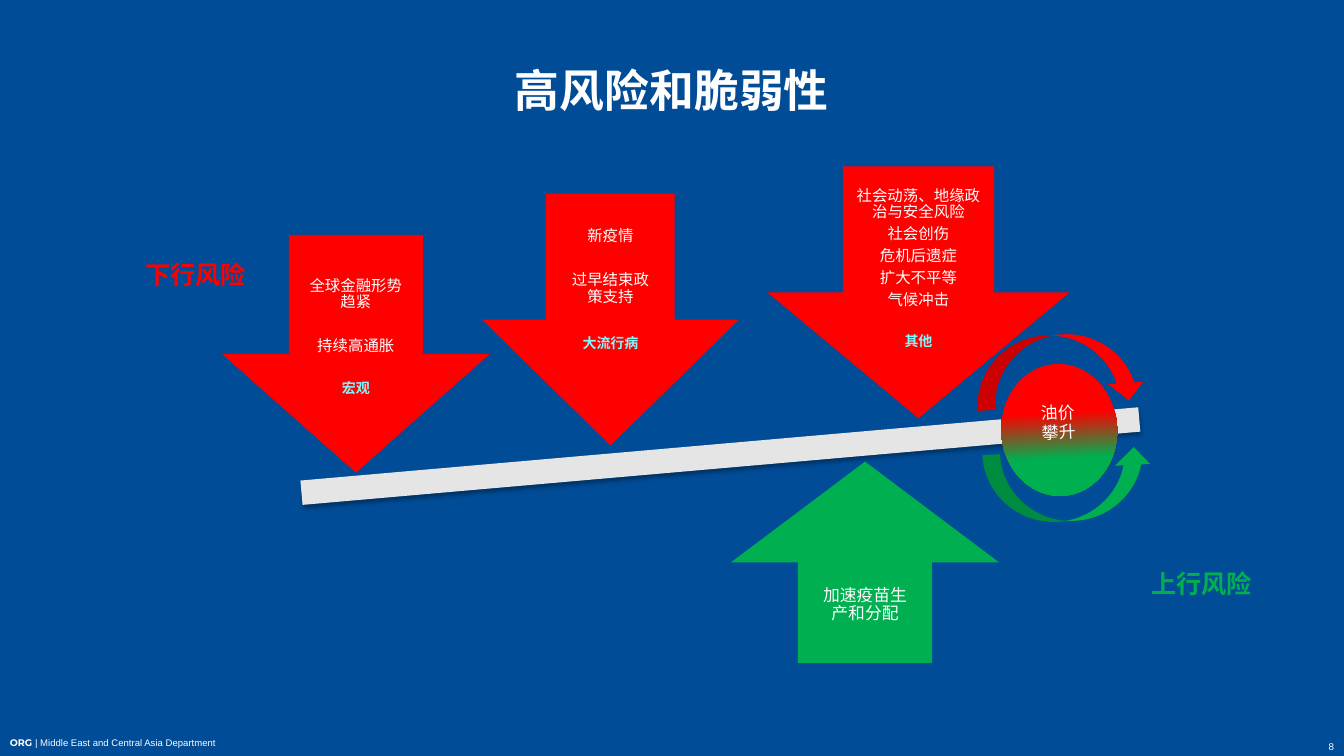
import dataclasses

import pptx
import pptx.dml.color
import pptx.enum.shapes
import pptx.enum.text
import pptx.oxml
import pptx.oxml.ns
import pptx.util

Inches = pptx.util.Inches
Pt = pptx.util.Pt
ALIGN = pptx.enum.text.PP_ALIGN
ANCHOR = pptx.enum.text.MSO_ANCHOR
PRESET = pptx.enum.shapes.MSO_SHAPE


@dataclasses.dataclass(frozen=True)
class Theme:
    background: str = "004C97"
    text: str = "FEFEFE"
    downside: str = "FF0000"
    upside: str = "00B050"
    accent: str = "7DF9FF"
    beam: str = "E5E5E5"
    font: str = "Noto Sans CJK SC"
    footer_font: str = "Arial"
    footer_bold_font: str = "Montserrat"
    title_size: float = 32
    label_size: float = 18
    upside_size: float = 12
    risk_size: float = 11
    category_size: float = 10
    footer_size: float = 6.8
    number_size: float = 7


THEME = Theme()


# Formatting helpers
def apply_format(target, values):
    for name, value in values.items():
        setattr(target, name, value)


def rgb(color):
    return pptx.dml.color.RGBColor.from_string(color)


def draw_xml(tag, content):
    return pptx.oxml.parse_xml(
        f"<a:{tag} {pptx.oxml.ns.nsdecls('a')}>{content}</a:{tag}>")


def set_frame(frame, insets=(0.1, 0.05, 0.1, 0.05), anchor=ANCHOR.TOP):
    sides = ("margin_left", "margin_top", "margin_right", "margin_bottom")
    apply_format(frame, dict(zip(sides, map(Inches, insets))))
    apply_format(frame, {"word_wrap": True, "vertical_anchor": anchor})


def add_run(paragraph, text, size, color=THEME.text, bold=False, font=THEME.font):
    run = paragraph.add_run()
    run.text = text
    apply_format(run.font, {"size": Pt(size), "bold": bold, "name": font})
    run.font.color.rgb = rgb(color)
    east_asian = pptx.oxml.parse_xml(
        f'<a:ea {pptx.oxml.ns.nsdecls("a")} typeface="{font}"/>')
    run.font._element.find(pptx.oxml.ns.qn("a:latin")).addnext(east_asian)


def write_lines(frame, lines, align=ALIGN.CENTER):
    """Each line is (text, run format, line pitch, space before)."""
    for index, (text, style, pitch, gap) in enumerate(lines):
        paragraph = frame.add_paragraph() if index else frame.paragraphs[0]
        apply_format(paragraph, {"alignment": align, "line_spacing": Pt(pitch),
                                 "space_before": Pt(gap), "space_after": Pt(0)})
        add_run(paragraph, text, **style)


def paint(shape, color):
    shape.shadow.inherit = False
    shape.fill.solid()
    shape.fill.fore_color.rgb = rgb(color)
    shape.line.fill.background()


# Slide elements
def add_preset(slide, preset, box, rotation, color):
    shape = slide.shapes.add_shape(preset, *map(Inches, box))
    paint(shape, color)
    shape.rotation = rotation
    return shape


def add_text_box(slide, box, **frame_format):
    frame = slide.shapes.add_textbox(*map(Inches, box)).text_frame
    set_frame(frame, **frame_format)
    return frame


def add_block_arrow(slide, box, color, lines, insets, up=False):
    """The shaft is half the width, and the head half the height."""
    left, top, width, height = box
    tail, tip = (top + height, top) if up else (top, top + height)
    neck = top + height / 2
    columns = [left + width * step / 4 for step in range(5)]
    outline = [(0, neck), (1, neck), (1, tail), (3, tail),
               (3, neck), (4, neck), (2, tip)]
    points = [(Inches(columns[column]), Inches(y)) for column, y in outline]
    builder = slide.shapes.build_freeform(*points[0])
    builder.add_line_segments(points[1:], close=True)
    arrow = builder.convert_to_shape()
    paint(arrow, color)
    set_frame(arrow.text_frame, insets)
    write_lines(arrow.text_frame, lines)


def add_downside_arrow(slide, box, top_inset, risks, category, category_gap):
    lines = [(text, {"size": THEME.risk_size}, 11.5, gap) for text, gap in risks]
    style = {"size": THEME.category_size, "color": THEME.accent, "bold": True}
    lines.append((category, style, 11, category_gap))
    add_block_arrow(slide, box, THEME.downside, lines, (0.84, top_inset, 0.84, 0))


def add_label(slide, box, text, color, align):
    style = {"size": THEME.label_size, "color": color, "bold": True}
    write_lines(add_text_box(slide, box), [(text, style, 23, 0)], align)


def add_title(slide):
    title = slide.shapes.title
    apply_format(title, {"left": Inches(1.37), "top": Inches(0.57),
                         "width": Inches(10.59), "height": Inches(0.64)})
    set_frame(title.text_frame, anchor=ANCHOR.MIDDLE)
    paragraph = title.text_frame.paragraphs[0]
    paragraph.alignment = ALIGN.CENTER
    add_run(paragraph, "高风险和脆弱性", THEME.title_size, bold=True)


def add_beam(slide):
    beam = add_preset(slide, PRESET.MATH_MINUS, (1.47, 4.01, 11.35, 1.03),
                      355, THEME.beam)
    effects = beam._element.spPr.find(pptx.oxml.ns.qn("a:effectLst"))
    effects.append(pptx.oxml.parse_xml(
        f'<a:outerShdw {pptx.oxml.ns.nsdecls("a")} blurRad="{Pt(3.1)}" '
        f'dist="{Pt(1.8)}" dir="5400000" rotWithShape="0">'
        '<a:srgbClr val="000000"><a:alpha val="35000"/></a:srgbClr></a:outerShdw>'))


def add_oil_price(slide):
    add_preset(slide, PRESET.CURVED_DOWN_ARROW, (9.67, 3.32, 1.68, 0.7),
               356, THEME.downside)
    add_preset(slide, PRESET.CURVED_UP_ARROW, (9.76, 4.47, 1.68, 0.7),
               357, THEME.upside)
    oil = add_preset(slide, PRESET.OVAL, (9.93, 3.61, 1.15, 1.31),
                     357.2, THEME.downside)
    # Red fades to green from top to bottom
    stops = [(0, THEME.downside), (38, THEME.downside),
             (70, THEME.upside), (100, THEME.upside)]
    stop_xml = "".join(f'<a:gs pos="{place * 1000}"><a:srgbClr val="{color}"/></a:gs>'
                       for place, color in stops)
    gradient = draw_xml("gradFill", f"<a:gsLst>{stop_xml}</a:gsLst>"
                                    '<a:lin ang="5400000" scaled="0"/>')
    properties = oil._element.spPr
    properties.replace(properties.find(pptx.oxml.ns.qn("a:solidFill")), gradient)
    set_frame(oil.text_frame, (0.1, 0.19, 0.1, 0))
    style = {"size": THEME.upside_size}
    write_lines(oil.text_frame, [(text, style, 14.3, 0) for text in ("油价", "攀升")])


def add_footer(slide):
    department = add_text_box(slide, (0, 7.26, 10, 0.22)).paragraphs[0]
    add_run(department, "ORG", THEME.footer_size, bold=True,
            font=THEME.footer_bold_font)
    add_run(department, " | Middle East and Central Asia Department",
            THEME.footer_size, font=THEME.footer_font)
    number = add_text_box(slide, (12.01, 7.28, 1.32, 0.23),
                          anchor=ANCHOR.BOTTOM).paragraphs[0]
    number.alignment = ALIGN.RIGHT
    add_run(number, "8", THEME.number_size, font=THEME.footer_font)


def main():
    deck = pptx.Presentation()
    apply_format(deck, {"slide_width": Inches(13.33), "slide_height": Inches(7.5)})
    slide = deck.slides.add_slide(deck.slide_layouts[5])
    slide.background.fill.solid()
    slide.background.fill.fore_color.rgb = rgb(THEME.background)
    add_footer(slide)
    add_title(slide)
    add_beam(slide)

    # Risks pressing on the beam
    add_downside_arrow(slide, (4.78, 1.92, 2.55, 2.5), 0.35,
                       [("新疫情", 0), ("过早结束政策支持", 20)], "大流行病", 22)
    add_block_arrow(slide, (7.25, 4.58, 2.66, 2), THEME.upside,
                    [("加速疫苗生产和分配", {"size": THEME.upside_size}, 12.9, 0)],
                    (0.84, 1.24, 0.84, 0), up=True)
    add_label(slide, (1.07, 2.5, 1.47, 0.71), "下行风险", THEME.downside, ALIGN.RIGHT)
    add_label(slide, (11.32, 5.57, 1.33, 0.71), "上行风险", THEME.upside, ALIGN.LEFT)
    add_downside_arrow(slide, (2.2, 2.33, 2.66, 2.36), 0.43,
                       [("全球金融形势趋紧", 0), ("持续高通胀", 20)], "宏观", 18.5)
    add_downside_arrow(slide, (7.61, 1.65, 3, 2.5), 0.22,
                       [("社会动荡、地缘政治与安全风险", 0), ("社会创伤", 4.2),
                        ("危机后遗症", 4.2), ("扩大不平等", 4.2), ("气候冲击", 4.2)],
                       "其他", 18)
    add_oil_price(slide)
    deck.save("out.pptx")


if __name__ == "__main__":
    main()
